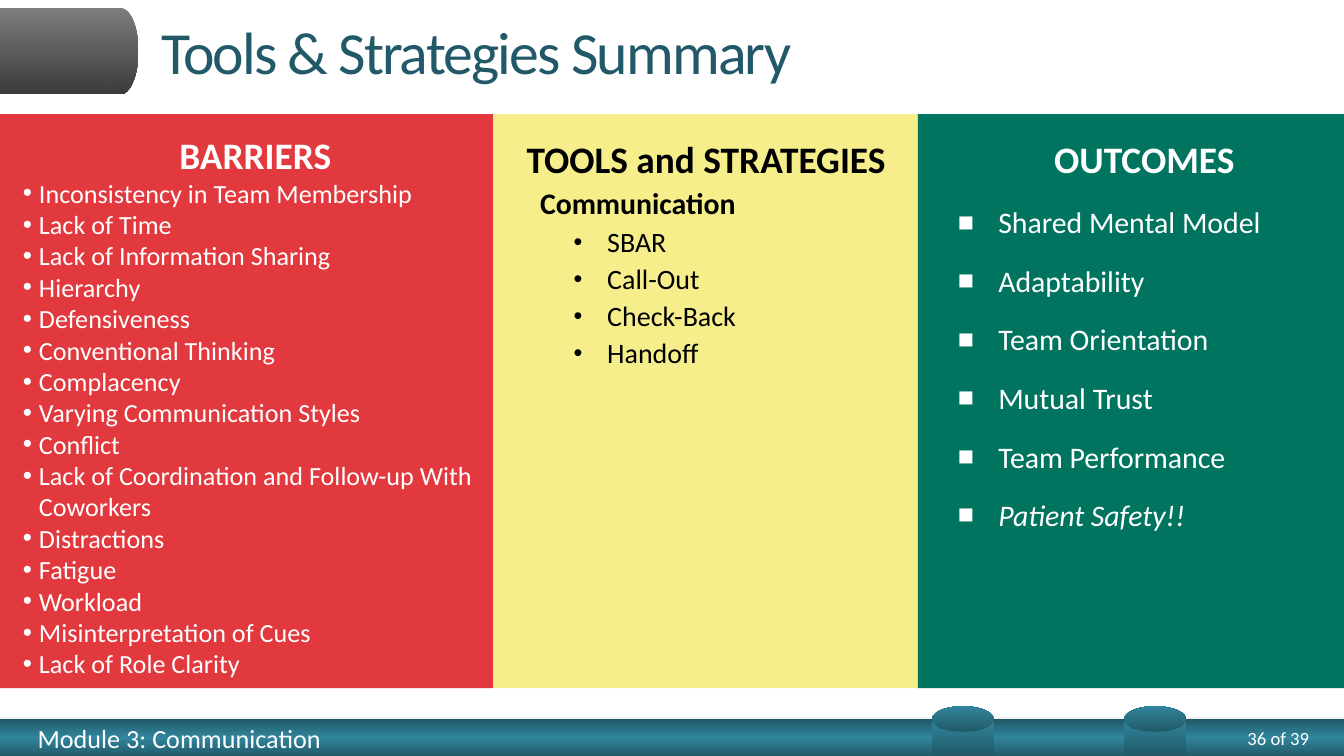
from lxml import etree
from pptx import Presentation
from pptx.dml.color import RGBColor
from pptx.enum import shapes, text
from pptx.oxml import parse_xml
from pptx.oxml.ns import nsdecls, qn
from pptx.util import Inches, Pt

FONT = "Calibri"
WHITE = RGBColor(0xFF, 0xFF, 0xFF)
BLACK = RGBColor(0x00, 0x00, 0x00)
DARK_TEAL = RGBColor(0x21, 0x59, 0x68)
TEAL = RGBColor(0x31, 0x85, 0x9C)
LIGHT_GRAY = RGBColor(0x7D, 0x7D, 0x7D)
DARK_GRAY = RGBColor(0x3B, 0x3B, 0x3B)
RED = RGBColor(0xE1, 0x39, 0x3E)
YELLOW = RGBColor(0xF5, 0xEE, 0x8B)
GREEN = RGBColor(0x01, 0x74, 0x60)
RECTANGLE = shapes.MSO_SHAPE.RECTANGLE
OVAL = shapes.MSO_SHAPE.OVAL

BARRIERS = [
    "Inconsistency in Team Membership", "Lack of Time",
    "Lack of Information Sharing", "Hierarchy", "Defensiveness",
    "Conventional Thinking", "Complacency", "Varying Communication Styles",
    "Conflict", "Lack of Coordination and Follow-up With Coworkers",
    "Distractions", "Fatigue", "Workload", "Misinterpretation of Cues",
    "Lack of Role Clarity",
]
TOOLS = ["SBAR", "Call-Out", "Check-Back", "Handoff"]
OUTCOMES = [
    "Shared Mental Model", "Adaptability", "Team Orientation",
    "Mutual Trust", "Team Performance", "Patient Safety!!",
]


def add_gradient_shape(kind, left, top, width, height, colors, angle, rotation=0):
    """Add a borderless shape whose colours are spread evenly along the angle."""
    shape = page.shapes.add_shape(
        kind, Inches(left), Inches(top), Inches(width), Inches(height))
    shape.rotation = rotation
    shape.shadow.inherit = False
    shape.line.fill.background()
    step = 100000 // (len(colors) - 1)
    stops = "".join(
        f'<a:gs pos="{i * step}"><a:srgbClr val="{color}"/></a:gs>'
        for i, color in enumerate(colors))
    gradient = parse_xml(
        f'<a:gradFill {nsdecls("a")} rotWithShape="1"><a:gsLst>{stops}</a:gsLst>'
        f'<a:lin ang="{angle * 60000}" scaled="0"/></a:gradFill>')
    shape._element.spPr.find(qn("a:prstGeom")).addnext(gradient)
    return shape


def format_paragraph(para, size, color, bold=False, spacing=1.0, before=0,
                     left=0, hanging=0, bullet=None, bullet_size=100):
    properties = para._p.get_or_add_pPr()
    properties.set("marL", str(Inches(left)))
    properties.set("indent", str(-Inches(hanging)))
    if bullet:
        size_tag = etree.SubElement(properties, qn("a:buSzPct"))
        size_tag.set("val", str(bullet_size * 1000))
        etree.SubElement(properties, qn("a:buFont")).set("typeface", "Arial")
        etree.SubElement(properties, qn("a:buChar")).set("char", bullet)
    else:
        etree.SubElement(properties, qn("a:buNone"))
    para.line_spacing = spacing
    para.space_before = Pt(before)
    for span in para.runs:
        span.font.name = FONT
        span.font.size = Pt(size)
        span.font.bold = bold
        span.font.color.rgb = color


deck = Presentation()
deck.slide_width = Inches(10)
deck.slide_height = Inches(10) * 9 // 16
page = deck.slides.add_slide(deck.slide_layouts[1])

# Footer band with its text and two cylinders
band = add_gradient_shape(
    RECTANGLE, 0, 5.35, 10, 0.28, [DARK_TEAL, TEAL, DARK_TEAL], 270)
effects = band._element.spPr.find(qn("a:effectLst"))
effects.append(parse_xml(
    f'<a:outerShdw {nsdecls("a")} blurRad="{Pt(3.1)}" dist="{Pt(1)}" dir="5400000" '
    'rotWithShape="0"><a:srgbClr val="000000"><a:alpha val="35000"/></a:srgbClr>'
    '</a:outerShdw>'))

for label, left, width, size, alignment in [
    ("Module 3: Communication", 0.28, 5.36, 14, text.PP_ALIGN.LEFT),
    ("36 of 39", 8.93, 0.81, 10, text.PP_ALIGN.RIGHT),
]:
    box = page.shapes.add_textbox(
        Inches(left), Inches(5.35), Inches(width), Inches(0.28))
    frame = box.text_frame
    frame.word_wrap = True
    frame.vertical_anchor = text.MSO_ANCHOR.MIDDLE
    frame.margin_left = frame.margin_right = 0
    frame.margin_top = frame.margin_bottom = 0
    frame.text = label
    frame.paragraphs[0].alignment = alignment
    format_paragraph(frame.paragraphs[0], size, WHITE)

for left in (7.03, 8.46):
    add_gradient_shape(
        RECTANGLE, left, 5.26, 0.27, 0.46, [DARK_TEAL, TEAL], 0, 270)
    add_gradient_shape(
        OVAL, left + 0.04, 5.12, 0.19, 0.46, [DARK_TEAL, TEAL], 0, 270)

# Title with the rounded tab at its left
add_gradient_shape(RECTANGLE, 0, 0.06, 0.9, 0.64, [LIGHT_GRAY, DARK_GRAY], 90)
add_gradient_shape(OVAL, 0.77, 0.06, 0.26, 0.64, [LIGHT_GRAY, DARK_GRAY], 90)

title = page.shapes.title
title.left, title.top = Inches(1.1), Inches(0)
title.width, title.height = Inches(8.77), Inches(0.75)
title.text_frame.text = "Tools & Strategies Summary"
title.text_frame.auto_size = text.MSO_AUTO_SIZE.NONE
title.text_frame.vertical_anchor = text.MSO_ANCHOR.MIDDLE
heading = title.text_frame.paragraphs[0]
heading.alignment = text.PP_ALIGN.LEFT
format_paragraph(heading, 32, DARK_TEAL)
heading.runs[0].font._element.set("spc", "-100")

# Three panels: heading style, then each line with its style
barrier_style = dict(size=14, left=0.19, hanging=0.12, bullet="•")
group_style = dict(size=16, bold=True, spacing=0.9, before=4, left=0.5, hanging=0.25)
tool_style = dict(size=15, spacing=0.9, before=3.75, left=0.75, hanging=0.25,
                  bullet="•", bullet_size=90)
outcome_style = dict(size=16, spacing=1.3, before=6.4, left=0.5, hanging=0.3,
                     bullet="■", bullet_size=90)

barriers = page.placeholders[1]
tools = page.shapes.add_shape(RECTANGLE, 0, 0, 0, 0)
outcomes = page.shapes.add_shape(RECTANGLE, 0, 0, 0, 0)
for shape in (tools, outcomes):
    shape.shadow.inherit = False

for panel, left, width, fill, color, name, name_style, lines in [
    (barriers, 0, 3.67, RED, WHITE, "BARRIERS",
     dict(spacing=0.8, left=0.38, hanging=0.25),
     [(line, barrier_style) for line in BARRIERS]),
    (tools, 3.67, 3.17, YELLOW, BLACK, "TOOLS and STRATEGIES",
     dict(spacing=0.9),
     [("Communication", group_style)] + [(line, tool_style) for line in TOOLS]),
    (outcomes, 6.83, 3.17, GREEN, WHITE, "OUTCOMES",
     dict(spacing=0.9, left=0.5, hanging=0.3),
     [(line, outcome_style) for line in OUTCOMES]),
]:
    panel.left, panel.top = Inches(left), Inches(0.85)
    panel.width, panel.height = Inches(width), Inches(4.27)
    panel.fill.solid()
    panel.fill.fore_color.rgb = fill
    panel.line.fill.background()
    frame = panel.text_frame
    frame.word_wrap = True
    frame.auto_size = text.MSO_AUTO_SIZE.NONE
    frame.vertical_anchor = text.MSO_ANCHOR.TOP
    frame.margin_left = frame.margin_right = Inches(0.1)
    frame.margin_top, frame.margin_bottom = Inches(0.2), Inches(0.05)
    frame.text = name
    frame.paragraphs[0].alignment = text.PP_ALIGN.CENTER
    format_paragraph(frame.paragraphs[0], 20, color, bold=True, **name_style)
    for line, style in lines:
        para = frame.add_paragraph()
        para.text = line
        para.alignment = text.PP_ALIGN.LEFT
        format_paragraph(para, color=color, **style)

outcomes.text_frame.paragraphs[-1].runs[0].font.italic = True

deck.save("out.pptx")
